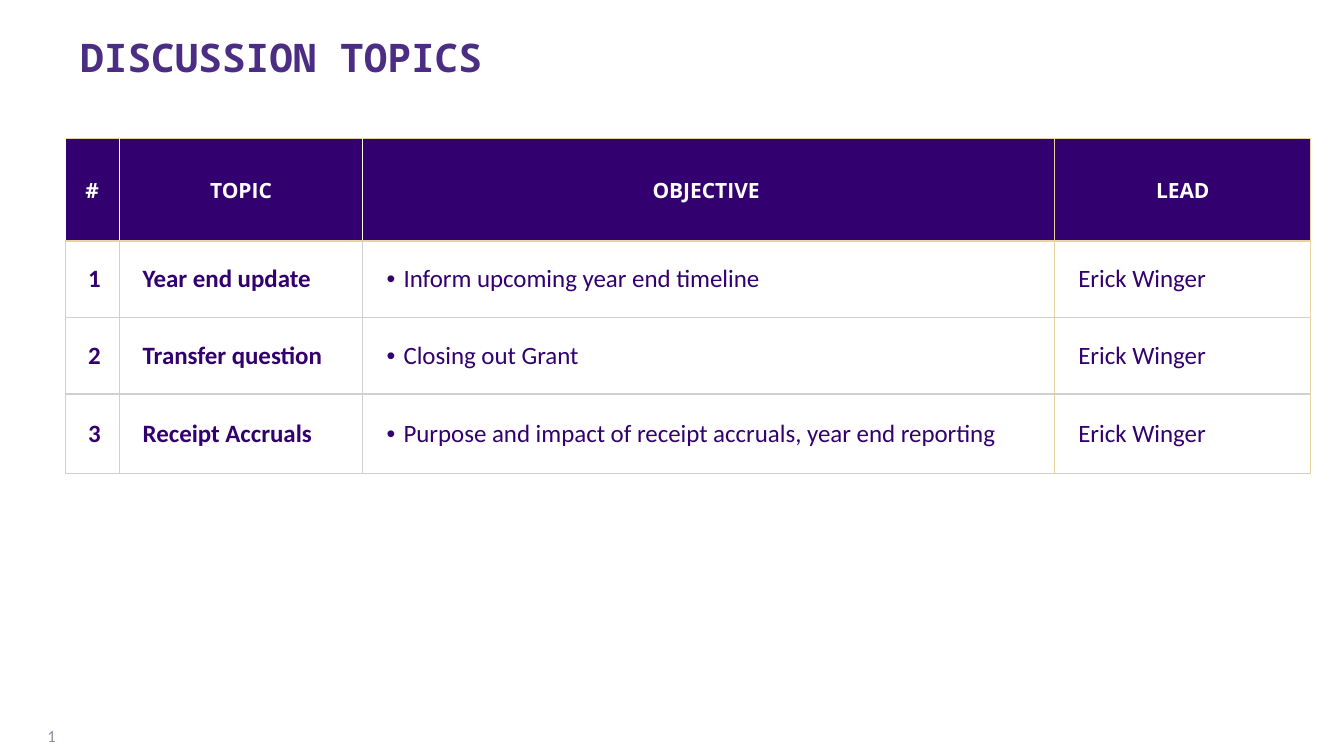
from lxml.etree import SubElement
from pptx import Presentation
from pptx.dml.color import RGBColor
from pptx.enum.text import MSO_ANCHOR, PP_ALIGN
from pptx.oxml.ns import qn
from pptx.util import Inches, Pt

TITLE = "DISCUSSION TOPICS"
HEAD = ["#", "TOPIC", "OBJECTIVE\u00a0", "LEAD"]
TOPICS = [
    ("1", "Year end update", "Inform upcoming year end timeline", "Erick Winger"),
    ("2", "Transfer question", "Closing out Grant", "Erick Winger"),
    ("3", "Receipt Accruals",
     "Purpose and impact of receipt accruals, year end reporting", "Erick Winger"),
]
COLS = [0.57, 2.58, 7.32, 2.71]
ROWS = [1.08, 0.81, 0.81, 0.84]
PURPLE, GOLD, GRAY, WHITE = "33006F", "E8D3A2", "D0D0D0", "FFFFFF"
NUM, TOPIC, GOAL, LEAD = range(4)


def style(para, name, size, color, bold=False):
    font = para.font
    font.name, font.size, font.bold = name, Pt(size), bold
    font.color.rgb = RGBColor.from_string(color)


def indent(para, left, first=0, bullet=None):
    props = para._p.get_or_add_pPr()
    props.set("marL", str(Inches(left)))
    props.set("indent", str(Inches(first)))
    if bullet:
        SubElement(props, qn("a:buFont"), typeface="Arial")
        SubElement(props, qn("a:buChar"), char=bullet)


def border(cell, sides):
    # Border lines come before the fill in the cell properties
    props = cell._tc.get_or_add_tcPr()
    for spot, (side, color) in enumerate(sides.items()):
        line = SubElement(props, qn("a:ln" + side), w=str(Pt(1)))
        fill = SubElement(line, qn("a:solidFill"))
        SubElement(fill, qn("a:srgbClr"), val=color)
        props.insert(spot, line)


def edges(row, col):
    inner = WHITE if row == 0 else GRAY
    return {
        "L": GOLD if col == LEAD else inner,
        "R": GOLD if col >= GOAL else inner,
        "T": GOLD if row <= 1 else GRAY,
        "B": GOLD if row == 0 else GRAY,
    }


def fill_cell(cell, text, row, col):
    head = row == 0
    cell.text = text
    cell.vertical_anchor = MSO_ANCHOR.MIDDLE
    cell.margin_left = Inches(0 if head else 0.05)
    cell.margin_right = cell.margin_top = cell.margin_bottom = 0
    para = cell.text_frame.paragraphs[0]
    if head or col == NUM:
        para.alignment = PP_ALIGN.CENTER
    elif col == GOAL:
        indent(para, 0.38, -0.18, "•")
    else:
        indent(para, 0.2)
    if head:
        cell.fill.solid()
        cell.fill.fore_color.rgb = RGBColor.from_string(PURPLE)
        style(para, "Open Sans", 16, WHITE, True)
    else:
        cell.fill.background()
        style(para, "Calibri", 19, PURPLE, col in (NUM, TOPIC))
    border(cell, edges(row, col))


def main():
    deck = Presentation()
    deck.slide_width, deck.slide_height = Inches(14.22), Inches(8)
    slide = deck.slides.add_slide(deck.slide_layouts[5])

    # Title
    title = slide.shapes.title
    title.left, title.top = Inches(0.75), Inches(0.36)
    title.width, title.height = Inches(12.45), Inches(0.52)
    title.text = TITLE
    title.text_frame.vertical_anchor = MSO_ANCHOR.TOP
    para = title.text_frame.paragraphs[0]
    para.alignment, para.line_spacing = PP_ALIGN.LEFT, 0.9
    style(para, "Noto Sans Mono", 30, "4B2E83", True)

    # Topic table
    table = slide.shapes.add_table(
        len(ROWS), len(COLS), Inches(0.69), Inches(1.47),
        Inches(sum(COLS)), Inches(sum(ROWS))).table
    table.horz_banding = False
    for col, width in zip(table.columns, COLS):
        col.width = Inches(width)
    for row, height in zip(table.rows, ROWS):
        row.height = Inches(height)
    for row, texts in enumerate([HEAD, *TOPICS]):
        for col, text in enumerate(texts):
            fill_cell(table.cell(row, col), text, row, col)

    # Page number
    box = slide.shapes.add_textbox(
        Inches(0.19), Inches(7.57), Inches(0.5), Inches(0.43))
    frame = box.text_frame
    frame.word_wrap, frame.vertical_anchor = True, MSO_ANCHOR.MIDDLE
    frame.text = "1"
    frame.paragraphs[0].alignment = PP_ALIGN.RIGHT
    style(frame.paragraphs[0], "Calibri", 12.8, "908CA4")

    deck.save("out.pptx")


if __name__ == "__main__":
    main()
